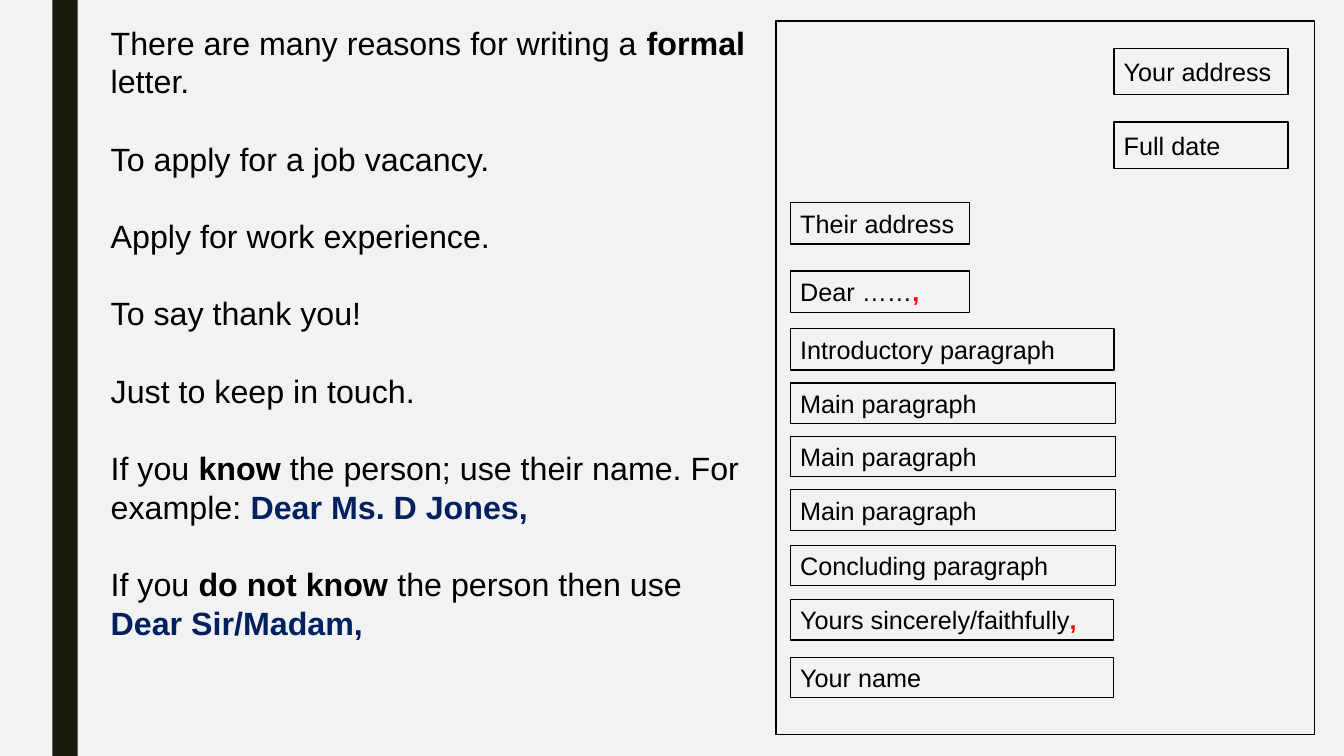
from pptx import Presentation
from pptx.dml.color import RGBColor
from pptx.enum.shapes import MSO_SHAPE as Shape
from pptx.enum.text import MSO_ANCHOR as Anchor, PP_ALIGN as Align
from pptx.util import Inches, Pt

COLORS = {
    "background": "F2F2F2",
    "stripe": "191B0E",
    "ink": "000000",
    "greeting": "002060",
    "comma": "FF0000",
}
CELL = Inches(0.1)
COLUMNS, ROWS = 133.33, 75

LEFT, RIGHT = 78.4, 110.5
SENDER, RECIPIENT, BODY, MAIN = 17.3, 17.8, 32.1, 32.3
COMMA = (",", {"bold": True, "color": "comma"})
BOLD = {"bold": True}
GREETING = {"bold": True, "color": "greeting"}

LETTER_PARTS = [
    (RIGHT, 4.8, SENDER, 4.6, 1, ["Your address"]),
    (RIGHT, 12.1, SENDER, 4.6, 1, ["Full date"]),
    (LEFT, 20.1, RECIPIENT, 4.1, 1, ["Their address"]),
    (LEFT, 26.9, RECIPIENT, 4.1, 1, ["Dear ……", COMMA]),
    (LEFT, 32.6, BODY, 4.1, 1, ["Introductory paragraph"]),
    *[(LEFT, 38 + 5.3 * i, MAIN, 4, 0.75, ["Main paragraph"]) for i in range(3)],
    (LEFT, 54.1, MAIN, 4, 0.75, ["Concluding paragraph"]),
    (LEFT, 59.5, BODY, 4, 0.75, ["Yours sincerely/faithfully", COMMA]),
    (LEFT, 65.2, BODY, 4, 0.75, ["Your name"]),
]

REASONS = [
    ["There are many reasons for writing a ", ("formal", BOLD), " letter."],
    ["To apply for a job vacancy."],
    ["Apply for work experience."],
    ["To say thank you!"],
    ["Just to keep in touch."],
    ["If you ", ("know", BOLD), " the person; use their name. For example: ",
     ("Dear Ms. D Jones,", GREETING)],
    ["If you ", ("do not know ", BOLD), "the person then use ",
     ("Dear Sir/Madam,", GREETING)],
]


def color(name):
    return RGBColor.from_string(COLORS[name])


def place(column, row, columns, rows):
    return [round(cells * CELL) for cells in (column, row, columns, rows)]


def add_run(paragraph, text, size=18, bold=False, color_name="ink"):
    run = paragraph.add_run()
    run.text = text
    run.font.name = "Arial"
    run.font.size = Pt(size)
    run.font.bold = bold
    run.font.color.rgb = color(color_name)


def write(frame, paragraphs, size=18, anchor=Anchor.MIDDLE, line=None, gap=0):
    frame.word_wrap = True
    frame.vertical_anchor = anchor
    for index, pieces in enumerate(paragraphs):
        paragraph = frame.add_paragraph() if index else frame.paragraphs[0]
        paragraph.alignment = Align.LEFT
        paragraph.space_after = Pt(gap)
        if line:
            paragraph.line_spacing = Pt(line)
        for piece in pieces:
            text, style = (piece, {}) if isinstance(piece, str) else piece
            add_run(paragraph, text, size, style.get("bold", False),
                    style.get("color", "ink"))


def add_box(slide, area, fill=None, outline=None):
    box = slide.shapes.add_shape(Shape.RECTANGLE, *place(*area))
    box.shadow.inherit = False
    if fill:
        box.fill.solid()
        box.fill.fore_color.rgb = color(fill)
    else:
        box.fill.background()
    if outline:
        box.line.color.rgb = color("ink")
        box.line.width = Pt(outline)
    else:
        box.line.fill.background()
    return box


def add_reasons(slide):
    reasons = slide.shapes.add_textbox(*place(10, 1.8, 65.6, 79.1))
    write(reasons.text_frame, REASONS, size=23, anchor=Anchor.TOP,
          line=27.6, gap=27.6)


def add_letter(slide):
    add_box(slide, (77, 2.1, 53.4, 70.8), outline=1)
    for *area, outline, label in LETTER_PARTS:
        part = add_box(slide, area, outline=outline)
        write(part.text_frame, [label])


def main():
    deck = Presentation()
    deck.slide_width, deck.slide_height = place(0, 0, COLUMNS, ROWS)[2:]
    slide = deck.slides.add_slide(deck.slide_layouts[6])
    slide.background.fill.solid()
    slide.background.fill.fore_color.rgb = color("background")
    add_box(slide, (5.2, 0, 2.5, ROWS), fill="stripe")
    add_letter(slide)
    add_reasons(slide)
    deck.save("out.pptx")


if __name__ == "__main__":
    main()
